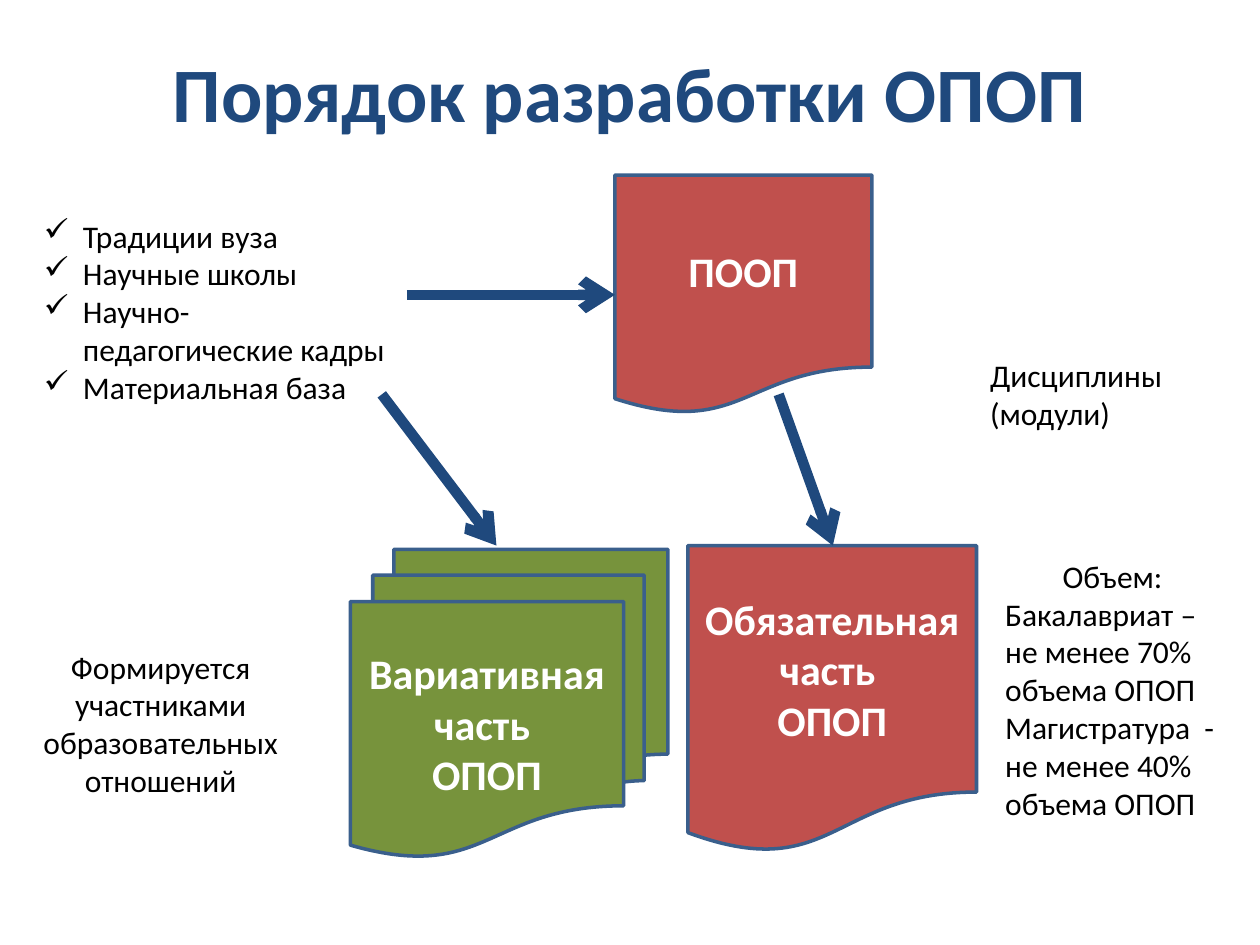
from lxml.etree import SubElement
from pptx import Presentation
from pptx.dml.color import RGBColor
from pptx.enum.shapes import MSO_CONNECTOR, MSO_SHAPE
from pptx.enum.text import MSO_ANCHOR, PP_ALIGN
from pptx.oxml.ns import qn
from pptx.util import Inches, Pt

COLORS = {
    "navy": "1F497D",
    "outline": "3A5F8C",
    "red": "C0504D",
    "green": "77933C",
    "white": "FFFFFF",
    "black": "000000",
}
LEFT, CENTER = PP_ALIGN.LEFT, PP_ALIGN.CENTER

TITLE = ("Порядок разработки ОПОП", (0.5, 0.22, 9, 1.01))
STRENGTHS = (
    ["Традиции вуза", "Научные школы", "Научно-педагогические кадры", "Материальная база"],
    (0.25, 1.67, 2.99, 1.62),
)
NOTES = [
    ([("Дисциплины (модули)", LEFT)], (7.76, 2.78, 1.65, 0.71)),
    ([("Формируется участниками образовательных отношений", CENTER)], (0.07, 5.09, 2.41, 1.31)),
    (
        [
            ("Объем:", CENTER),
            ("Бакалавриат – не менее 70% объема ОПОП", LEFT),
            ("Магистратура  - не менее 40% объема ОПОП", LEFT),
        ],
        (7.88, 4.37, 1.9, 2.22),
    ),
]
DOCUMENTS = [
    (["ПООП"], MSO_SHAPE.FLOWCHART_DOCUMENT, "red", (4.88, 1.39, 2.04, 1.9)),
    (["Обязательная часть ", "ОПОП"], MSO_SHAPE.FLOWCHART_DOCUMENT, "red", (5.46, 4.33, 2.29, 2.44)),
    (["Вариативная часть ", "ОПОП"], MSO_SHAPE.FLOWCHART_MULTIDOCUMENT, "green", (2.78, 4.36, 2.52, 2.44)),
]
ARROWS = [
    (3.23, 2.34, 4.88, 2.34),
    (6.18, 3.13, 6.61, 4.33),
    (3.03, 3.13, 3.94, 4.33),
]


def color(name):
    return RGBColor.from_string(COLORS[name])


def inches(values):
    return [Inches(value) for value in values]


def write(shape, lines, size, color_name, bold=False, anchor=MSO_ANCHOR.TOP):
    frame = shape.text_frame
    frame.word_wrap = True
    frame.vertical_anchor = anchor
    for index, (text, alignment) in enumerate(lines):
        paragraph = frame.add_paragraph() if index else frame.paragraphs[0]
        paragraph.text = text
        paragraph.alignment = alignment
        font = paragraph.font
        font.name, font.size, font.bold = "Calibri", Pt(size), bold
        font.color.rgb = color(color_name)


def add_text(slide, lines, box, size=18, color_name="black", **style):
    shape = slide.shapes.add_textbox(*inches(box))
    write(shape, lines, size, color_name, **style)
    return shape


def add_checks(shape):
    indent = Inches(0.31)
    for paragraph in shape.text_frame.paragraphs:
        properties = paragraph._p.get_or_add_pPr()
        properties.set("marL", str(indent))
        properties.set("indent", str(-indent))
        bullet = SubElement(properties, qn("a:buChar"))
        bullet.set("char", "✓")
        properties.insert(0, bullet)


def add_document(slide, lines, kind, fill, box):
    shape = slide.shapes.add_shape(kind, *inches(box))
    shape.shadow.inherit = False
    shape.fill.solid()
    shape.fill.fore_color.rgb = color(fill)
    shape.line.color.rgb = color("outline")
    shape.line.width = Pt(2)
    write(shape, [(line, CENTER) for line in lines], 24, "white", True, MSO_ANCHOR.MIDDLE)


def add_arrow(slide, ends):
    connector = slide.shapes.add_connector(MSO_CONNECTOR.STRAIGHT, *inches(ends))
    connector.line.color.rgb = color("navy")
    connector.line.width = Pt(6)
    SubElement(connector.line._get_or_add_ln(), qn("a:tailEnd")).set("type", "arrow")
    SubElement(connector._element.spPr, qn("a:effectLst"))


def main():
    presentation = Presentation()
    presentation.slide_width, presentation.slide_height = Inches(10), Inches(7.5)
    slide = presentation.slides.add_slide(presentation.slide_layouts[6])

    title, title_box = TITLE
    add_text(slide, [(title, CENTER)], title_box, 44, "navy", bold=True, anchor=MSO_ANCHOR.MIDDLE)
    strengths, strengths_box = STRENGTHS
    add_checks(add_text(slide, [(line, LEFT) for line in strengths], strengths_box))
    for document in DOCUMENTS:
        add_document(slide, *document)
    for ends in ARROWS:
        add_arrow(slide, ends)
    for lines, box in NOTES:
        add_text(slide, lines, box)

    presentation.save("out.pptx")


if __name__ == "__main__":
    main()
